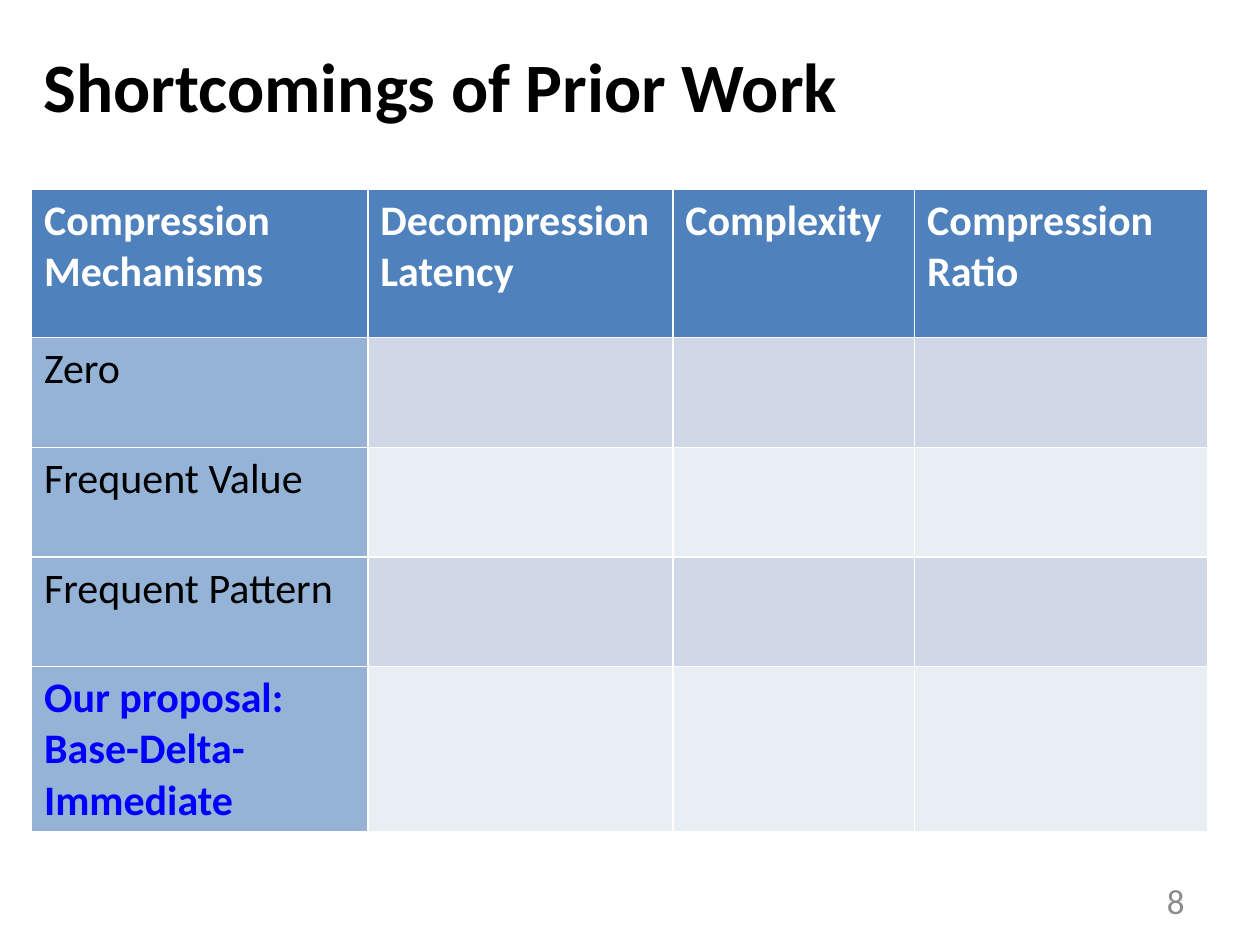
import pptx
import pptx.util
import pptx.dml.color
import pptx.enum.text

COLORS = {
    "title": "000000", "number": "8C8C8C", "header": "4F81BD",
    "header_text": "FFFFFF", "mechanism": "95B3D7", "mechanism_text": "000000",
    "proposal_text": "0000FF", "band_dark": "D0D8E8", "band_light": "E9EDF4",
}
HEADERS = ["Compression\nMechanisms", "Decompression\nLatency", "Complexity", "Compression\nRatio"]
MECHANISMS = ["Zero", "Frequent Value", "Frequent Pattern", "Our proposal:\nBase-Delta-Immediate"]
COLUMN_WIDTHS = [2.67, 2.42, 1.92, 2.33]
ROW_HEIGHTS = [1.18, 0.87, 0.87, 0.87, 1.31]


def rgb(name):
    return pptx.dml.color.RGBColor.from_string(COLORS[name])


def write(tf, text, size, color, bold=False, align=None):
    tf.text = text
    for p in tf.paragraphs:
        p.alignment = align
        for r in p.runs:
            r.font.name = "Calibri"
            r.font.size = pptx.util.Pt(size)
            r.font.bold = bold
            r.font.color.rgb = rgb(color)


def add_text(s, box, text, size, color, **style):
    sp = s.shapes.add_textbox(*map(pptx.util.Inches, box))
    tf = sp.text_frame
    tf.word_wrap = True
    tf.vertical_anchor = pptx.enum.text.MSO_ANCHOR.MIDDLE
    write(tf, text, size, color, **style)


def fill_cell(cell, fill):
    cell.fill.solid()
    cell.fill.fore_color.rgb = rgb(fill)


def add_comparison(s, left, top):
    size = sum(COLUMN_WIDTHS), sum(ROW_HEIGHTS)
    table = s.shapes.add_table(
        len(ROW_HEIGHTS), len(COLUMN_WIDTHS),
        *map(pptx.util.Inches, (left, top, *size))).table
    for column, width in zip(table.columns, COLUMN_WIDTHS):
        column.width = pptx.util.Inches(width)
    for row, height in zip(table.rows, ROW_HEIGHTS):
        row.height = pptx.util.Inches(height)

    for col, text in enumerate(HEADERS):
        cell = table.cell(0, col)
        fill_cell(cell, "header")
        write(cell.text_frame, text, 24, "header_text", bold=True)

    for row, text in enumerate(MECHANISMS, 1):
        proposal = row == len(MECHANISMS)
        color = "proposal_text" if proposal else "mechanism_text"
        fill_cell(table.cell(row, 0), "mechanism")
        write(table.cell(row, 0).text_frame, text, 24, color, bold=proposal)
        for col in range(1, len(HEADERS)):
            fill_cell(table.cell(row, col), "band_dark" if row % 2 else "band_light")


def main():
    prs = pptx.Presentation()
    prs.slide_width = pptx.util.Inches(10)
    prs.slide_height = pptx.util.Inches(7.5)
    s = prs.slides.add_slide(prs.slide_layouts[6])
    add_text(s, (0.25, 0.26, 9.42, 0.83), "Shortcomings of Prior Work", 39.6, "title", bold=True)
    add_comparison(s, 0.25, 1.5)
    add_text(s, (7.17, 6.95, 2.33, 0.4), "8", 20, "number",
             align=pptx.enum.text.PP_ALIGN.RIGHT)
    prs.save("out.pptx")


if __name__ == "__main__":
    main()
